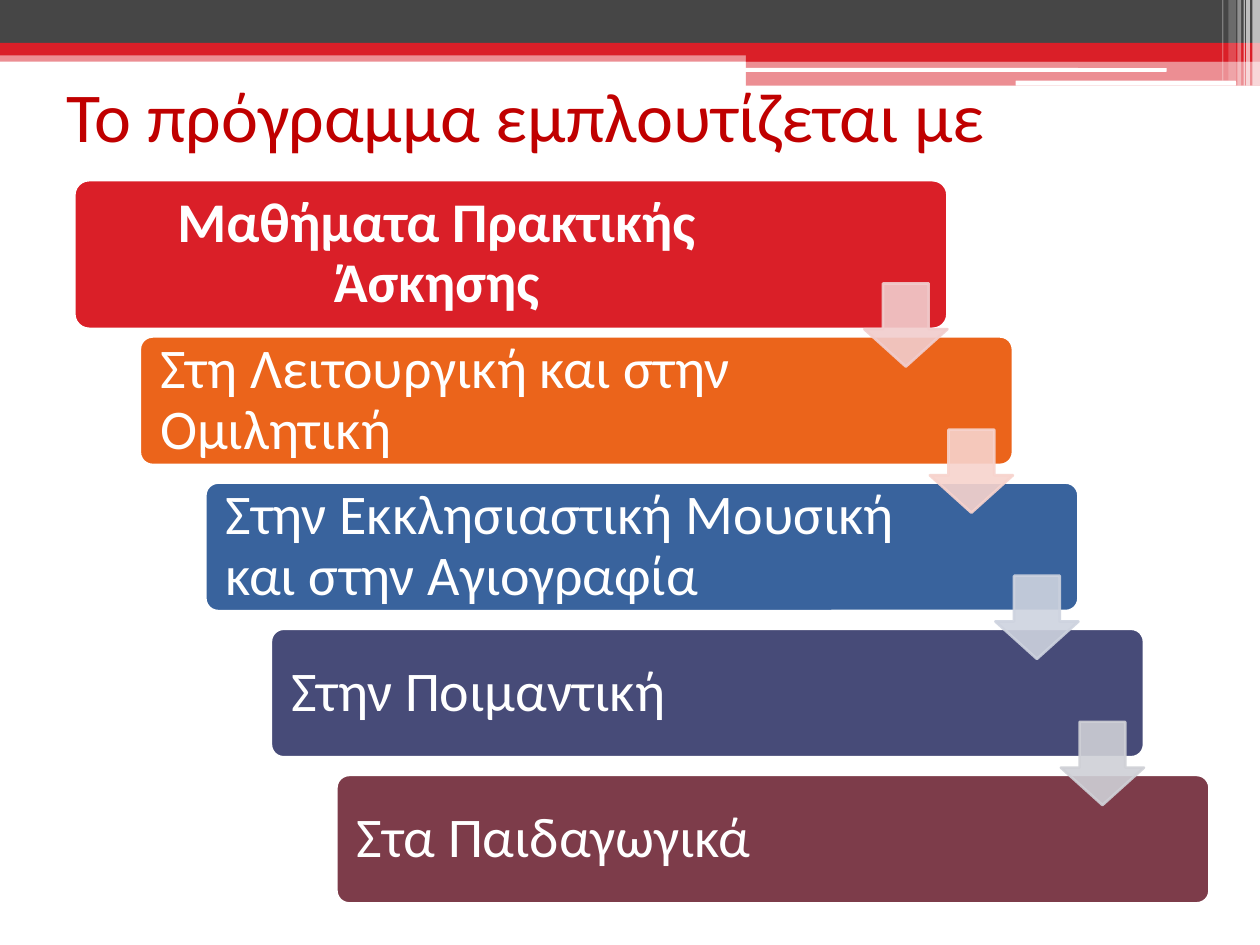
from dataclasses import dataclass

from lxml.etree import SubElement
from pptx import Presentation
from pptx.dml.color import RGBColor
from pptx.enum.shapes import MSO_SHAPE
from pptx.enum.text import MSO_ANCHOR, PP_ALIGN
from pptx.oxml.ns import qn
from pptx.util import Inches, Pt


@dataclass(frozen=True)
class Theme:
    """Colours, font and type sizes of the slide."""
    font: str = "Calibri"
    title_size: int = 40
    step_size: int = 32
    outline: float = 1.5
    title: str = "C00000"
    white: str = "FFFFFF"
    dark: str = "464646"
    red: str = "DA1F28"
    steps: tuple = ("DA1F28", "EB641B", "39639D", "474B78", "7D3C4A")
    arrows: tuple = ("F1CDCD", "F7D3CD", "CED3DF", "CFD0D6")


THEME = Theme()
STEPS = (
    "Μαθήματα Πρακτικής Άσκησης",
    "Στη Λειτουργική και στην Ομιλητική",
    "Στην Εκκλησιαστική Μουσική και στην Αγιογραφία",
    "Στην Ποιμαντική",
    "Στα Παιδαγωγικά",
)
STEP_LEFT, STEP_MIDDLE, STEP_WIDTH = 0.59, 2.02, 6.93
SHIFT, DROP = 0.52, 1.16


def add_block(slide, kind, box, color, opacity=100, outline=None, adjust=()):
    """Draw a filled preset shape with an optional outline and opacity."""
    block = slide.shapes.add_shape(kind, *map(Inches, box))
    block.shadow.inherit = False
    block.fill.solid()
    block.fill.fore_color.rgb = RGBColor.from_string(color)
    if outline:
        block.line.color.rgb = RGBColor.from_string(outline)
        block.line.width = Pt(THEME.outline)
    else:
        block.line.fill.background()
    for index, value in enumerate(adjust):
        block.adjustments[index] = value
    if opacity < 100:
        for paint in block._element.spPr.iter(qn("a:srgbClr")):
            SubElement(paint, qn("a:alpha"), val=str(opacity * 1000))


def add_text(slide, text, box, *, size, color, bold=False,
             align=PP_ALIGN.LEFT, spacing=1.0, inset=(0.1, 0.05)):
    """Add a wrapped, vertically centred line of text."""
    label = slide.shapes.add_textbox(*map(Inches, box))
    frame = label.text_frame
    frame.word_wrap = True
    frame.vertical_anchor = MSO_ANCHOR.MIDDLE
    frame.margin_left = frame.margin_right = Inches(inset[0])
    frame.margin_top = frame.margin_bottom = Inches(inset[1])
    paragraph = frame.paragraphs[0]
    paragraph.alignment = align
    paragraph.line_spacing = spacing
    run = paragraph.add_run()
    run.text = text
    run.font.name = THEME.font
    run.font.size = Pt(size)
    run.font.bold = bold
    run.font.color.rgb = RGBColor.from_string(color)


def add_header(slide):
    """Draw the layered bands and light stripes along the top edge."""
    bands = (
        ((0, 0.4, 10, 0.09), THEME.red, 50),
        ((0, 0, 10, 0.34), THEME.dark, 100),
        ((0, 0.34, 10, 0.1), THEME.red, 100),
        ((5.92, 0.39, 4.08, 0.1), THEME.red, 100),
        ((5.92, 0.48, 4.08, 0.2), THEME.red, 50),
    )
    for box, color, opacity in bands:
        add_block(slide, MSO_SHAPE.RECTANGLE, box, color, opacity)
    for box in ((5.91, 0.54, 3.35, 0.03), (8.06, 0.64, 1.75, 0.04)):
        add_block(slide, MSO_SHAPE.ROUNDED_RECTANGLE, box, THEME.white)
    stripes = (
        (9.94, 0.06, 0.68, 65), (9.89, 0.03, 0.68, 65),
        (9.87, 0.01, 0.68, 60), (9.82, 0.03, 0.68, 40),
        (9.75, 0.06, 0.64, 20), (9.7, 0.01, 0.64, 30),
    )
    for left, width, height, opacity in stripes:
        add_block(slide, MSO_SHAPE.RECTANGLE, (left, 0, width, height),
                  THEME.white, opacity)


def add_step(slide, index, text):
    """Draw one step of the staircase; the first is taller and bold."""
    first = index == 0
    height = 1.18 if first else 1.02
    left = STEP_LEFT + index * SHIFT
    top = STEP_MIDDLE + index * DROP - height / 2
    add_block(slide, MSO_SHAPE.ROUNDED_RECTANGLE,
              (left, top, STEP_WIDTH, height), THEME.steps[index],
              outline=THEME.white, adjust=(0.1,))
    add_text(slide, text, (left + 0.03, top + 0.03, 5.69, height - 0.06),
             size=THEME.step_size, color=THEME.white, bold=first,
             align=PP_ALIGN.CENTER if first else PP_ALIGN.LEFT,
             spacing=0.9, inset=(0.13, 0.13))


def add_arrow(slide, index, color):
    """Draw the arrow that leads from one step down to the next."""
    box = (6.86 + index * SHIFT, 2.25 + index * DROP, 0.66, 0.66)
    add_block(slide, MSO_SHAPE.DOWN_ARROW, box, color, 90,
              outline=color, adjust=(0.55, 0.45))


def main():
    """Build and save the slide."""
    deck = Presentation()
    deck.slide_width, deck.slide_height = Inches(10), Inches(7.5)
    slide = deck.slides.add_slide(deck.slide_layouts[6])
    add_header(slide)
    add_text(slide, "Το πρόγραμμα εμπλουτίζεται με", (0.43, 0.28, 9, 1.26),
             size=THEME.title_size, color=THEME.title)
    for index, text in enumerate(STEPS):
        add_step(slide, index, text)
    for index, color in enumerate(THEME.arrows):
        add_arrow(slide, index, color)
    deck.save("out.pptx")


if __name__ == "__main__":
    main()
